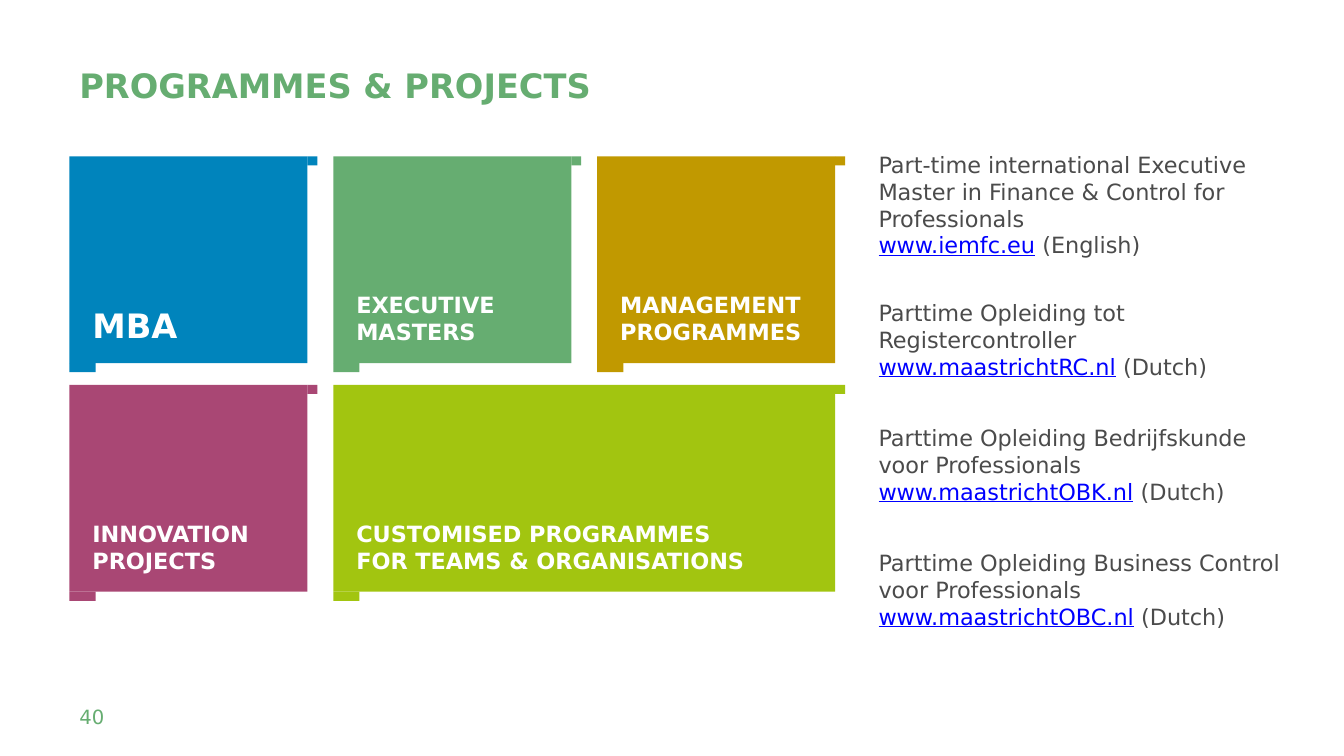
from pptx import Presentation
from pptx.dml.color import RGBColor as Rgb
from pptx.enum.shapes import MSO_SHAPE as Kind
from pptx.enum.text import MSO_ANCHOR as Anchor, MSO_AUTO_SIZE as Auto
from pptx.util import Cm, Pt

FONT = "DejaVu Sans"
GREEN, WHITE, GREY, BLUE = "66AD71", "FFFFFF", "4B4B4B", "0000FF"
LEFT, TOP = 1.75, 3.94
STEP_X, STEP_Y = 6.65, 5.76
WIDE, HIGH = 6, 5.21
THIN = 0.23

TILES = [
    (2, 0, 1, "C19900", "MANAGEMENT PROGRAMMES", 16, 5.74, 1.63),
    (1, 1, 2, "A2C510", "CUSTOMISED PROGRAMMES FOR TEAMS & ORGANISATIONS",
     16, 10.36, 2.31),
    (1, 0, 1, GREEN, "EXECUTIVE MASTERS", 16, 5.74, 1.63),
    (0, 0, 1, "0084BC", "MBA", 24, 5.74, 1.27),
    (0, 1, 1, "A94774", "INNOVATION PROJECTS", 16, 5.74, 1.63),
]

COURSES = [
    (3.68, 3, ["Part-time international Executive Master in Finance & Control "
               "for Professionals"], "www.iemfc.eu", "(English)"),
    (7.42, 2.31, ["Parttime Opleiding tot Registercontroller"],
     "www.maastrichtRC.nl", "(Dutch)"),
    (10.57, 2.31, ["Parttime Opleiding Bedrijfskunde", "voor Professionals"],
     "www.maastrichtOBK.nl", "(Dutch)"),
    (13.72, 2.31, ["Parttime Opleiding Business Control voor Professionals"],
     "www.maastrichtOBC.nl", "(Dutch)"),
]


def color(code):
    return Rgb.from_string(code)


def add_run(para, text, size, code, bold=False, line=False):
    run = para.add_run()
    run.text = text
    font = run.font
    font.name, font.size, font.bold = FONT, Pt(size), bold
    font.underline = line
    font.color.rgb = color(code)


def add_box(shapes, x, y, w, h, anchor=Anchor.TOP, auto=Auto.NONE):
    frame = shapes.add_textbox(Cm(x), Cm(y), Cm(w), Cm(h)).text_frame
    frame.word_wrap = True
    frame.auto_size = auto
    frame.vertical_anchor = anchor
    return frame


def add_block(shapes, x, y, w, h, code):
    block = shapes.add_shape(Kind.RECTANGLE, Cm(x), Cm(y), Cm(w), Cm(h))
    block.shadow.inherit = False
    block.fill.solid()
    block.fill.fore_color.rgb = color(code)
    block.line.fill.background()


def add_tile(slide, col, row, span, code, text, size, w, h):
    shapes = slide.shapes.add_group_shape().shapes
    x, y = LEFT + col * STEP_X, TOP + row * STEP_Y
    wide = WIDE + (span - 1) * STEP_X
    add_block(shapes, x, y, wide, HIGH, code)
    add_block(shapes, x + wide, y, 0.25, THIN, code)
    add_block(shapes, x, y + HIGH, 0.66, THIN, code)
    label = add_box(shapes, x + 0.33, y + 4.88 - h, w, h,
                    Anchor.BOTTOM, Auto.SHAPE_TO_FIT_TEXT)
    add_run(label.paragraphs[0], text, size, WHITE, bold=True)


def add_course(slide, y, h, lines, site, tongue):
    frame = add_box(slide.shapes, 21.89, y, 11.68, h,
                    auto=Auto.SHAPE_TO_FIT_TEXT)
    para = frame.paragraphs[0]
    for text in lines:
        add_run(para, text, 16, GREY)
        para = frame.add_paragraph()
    add_run(para, site, 16, BLUE, line=True)
    add_run(para, " ", 16, GREEN)
    add_run(para, tongue, 16, GREY)


def main():
    deck = Presentation()
    deck.slide_width, deck.slide_height = Cm(33.87), Cm(19.05)
    slide = deck.slides.add_slide(deck.slide_layouts[6])
    number = add_box(slide.shapes, LEFT, 17.65, 4.83, 0.86)
    add_run(number.paragraphs[0], "40", 14, GREEN)
    title = add_box(slide.shapes, LEFT, 1.37, 30.2, 3.18).paragraphs[0]
    title.line_spacing = 1.14
    add_run(title, "PROGRAMMES & PROJECTS", 24, GREEN, bold=True)
    for tile in TILES:
        add_tile(slide, *tile)
    for course in COURSES:
        add_course(slide, *course)
    deck.save("out.pptx")


if __name__ == "__main__":
    main()
